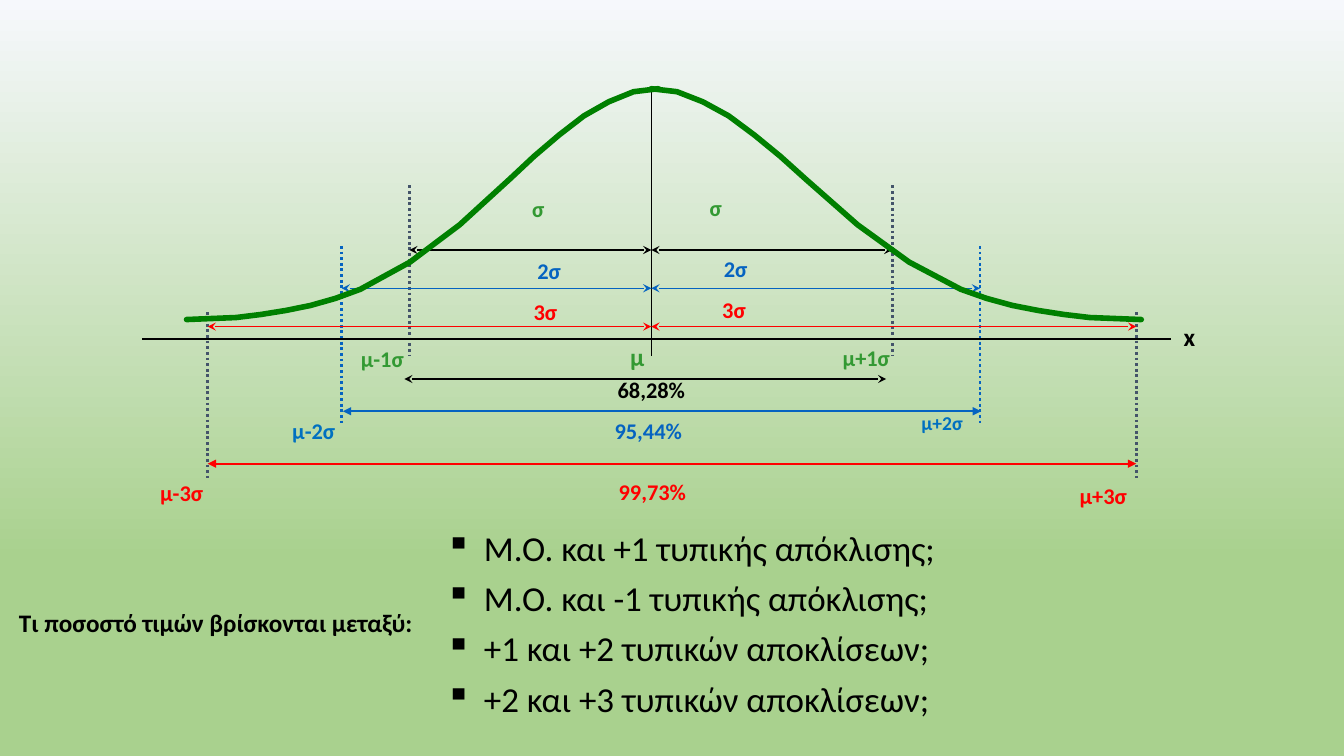
from dataclasses import dataclass

from lxml.etree import SubElement
from pptx import Presentation
from pptx.dml.color import RGBColor
from pptx.enum.dml import MSO_LINE
from pptx.enum.shapes import MSO_CONNECTOR
from pptx.enum.text import PP_ALIGN
from pptx.oxml.ns import qn
from pptx.slide import Slide
from pptx.util import Inches, Pt

FONT = "Calibri"
BLACK, SLATE, BLUE, SKY = "000000", "44546A", "0563C1", "0070C0"
RED, GREEN, CURVE_GREEN = "FF0000", "339933", "008000"
MEAN = 6.46
AXIS_Y = 3.36
CURVE_STEPS = (0, 1, 2, 3, 4, 5, 6, 8, 10, 12, 13, 14, 15, 16, 17, 19)
CURVE_HEIGHTS = (0.88, 0.91, 1.01, 1.15, 1.34, 1.55, 1.78, 2.23,
                 2.6, 2.87, 2.96, 3.03, 3.08, 3.12, 3.15, 3.17)
QUESTIONS = (
    "Μ.Ο. και +1 τυπικής απόκλισης;",
    "Μ.Ο. και -1 τυπικής απόκλισης;",
    "+1 και +2 τυπικών αποκλίσεων;",
    "+2 και +3 τυπικών αποκλίσεων;",
)


@dataclass
class Label:
    text: str
    left: float
    top: float
    width: float
    color: str
    size: int = 16
    height: float = 0.38
    align: PP_ALIGN = PP_ALIGN.LEFT
    wrap: bool = True


@dataclass
class Line:
    start: tuple[float, float]
    end: tuple[float, float]
    color: str
    width: float
    arrow: str = ""
    dotted: bool = False


@dataclass
class Band:
    left: float
    right: float
    guide_top: float
    guide_bottom: float
    guide_color: str
    half_y: float
    span_left: float
    span_right: float
    span_y: float
    span_arrow: str
    color: str


BANDS = (
    Band(4.06, 8.85, 1.84, 3.53, SLATE, 2.48, 4.01, 8.79, 3.76, "stealth", BLACK),
    Band(3.39, 9.72, 2.44, 4.22, BLUE, 2.86, 3.4, 9.73, 4.08, "triangle", BLUE),
    Band(2.06, 11.27, 3.1, 4.74, SLATE, 3.24, 2.06, 11.27, 4.6, "triangle", RED),
)

LABELS = (
    Label("μ", 6.15, 3.34, 0.69, GREEN, 18, 0.41),
    Label("μ+1σ", 8.26, 3.36, 1.44, GREEN),
    Label("μ-1σ", 3.48, 3.37, 1.32, GREEN),
    Label("σ", 6.94, 1.88, 0.62, GREEN),
    Label("σ", 5.18, 1.89, 0.74, GREEN),
    Label("μ+2σ", 9.04, 4.03, 1.44, SKY, 14, 0.34),
    Label("μ-2σ", 2.8, 4.09, 1.36, SKY),
    Label("μ+3σ", 10.61, 4.73, 1.44, RED),
    Label("μ-3σ", 1.49, 4.7, 1.36, RED),
    Label("2σ", 6.8, 2.48, 0.99, BLUE, align=PP_ALIGN.CENTER),
    Label("2σ", 4.95, 2.5, 0.99, BLUE, align=PP_ALIGN.CENTER),
    Label("3σ", 6.81, 2.89, 0.94, RED, align=PP_ALIGN.CENTER),
    Label("3σ", 4.98, 2.91, 0.86, RED, align=PP_ALIGN.CENTER),
    Label("68,28%", 5.49, 3.68, 1.94, BLACK, align=PP_ALIGN.CENTER),
    Label("95,44%", 5.33, 4.09, 2.2, BLUE, align=PP_ALIGN.CENTER),
    Label("99,73%", 5.47, 4.69, 2, RED, align=PP_ALIGN.CENTER),
    Label("x", 11.64, 3.14, 0.59, BLACK, 18, 0.41, wrap=False),
    Label("Τι ποσοστό τιμών βρίσκονται μεταξύ:", 0.09, 5.98, 4.24, BLACK, 18, 0.4),
)


def rgb(color: str) -> RGBColor:
    return RGBColor.from_string(color)


def paint_background(slide: Slide) -> None:
    fill = slide.background.fill
    fill.gradient()
    fill.gradient_angle = 270
    for stop, position, color in zip(fill.gradient_stops, (0, 0.74), ("F6F8FC", "A9D18E")):
        stop.position = position
        stop.color.rgb = rgb(color)


def draw_label(slide: Slide, label: Label) -> None:
    shape = slide.shapes.add_textbox(Inches(label.left), Inches(label.top),
                                     Inches(label.width), Inches(label.height))
    text_frame = shape.text_frame
    text_frame.word_wrap = label.wrap
    text_frame.text = label.text
    paragraph = text_frame.paragraphs[0]
    paragraph.alignment = label.align
    font = paragraph.runs[0].font
    font.name, font.size, font.bold = FONT, Pt(label.size), True
    font.color.rgb = rgb(label.color)


def draw_line(slide: Slide, line: Line) -> None:
    connector = slide.shapes.add_connector(
        MSO_CONNECTOR.STRAIGHT, *(Inches(value) for value in line.start + line.end))
    connector.line.color.rgb = rgb(line.color)
    connector.line.width = Pt(line.width)
    if line.dotted:
        connector.line.dash_style = MSO_LINE.ROUND_DOT
    properties = connector.element.spPr
    if line.arrow:
        outline = properties.find(qn("a:ln"))
        for end in ("a:headEnd", "a:tailEnd"):
            SubElement(outline, qn(end), type=line.arrow)
    SubElement(properties, qn("a:effectLst"))


def draw_band(slide: Slide, band: Band) -> None:
    for edge in (band.left, band.right):
        draw_line(slide, Line((edge, band.guide_top), (edge, band.guide_bottom),
                              band.guide_color, 2, dotted=True))
    for start, end in ((band.left, MEAN), (MEAN, band.right)):
        draw_line(slide, Line((start, band.half_y), (end, band.half_y),
                              band.color, 1, "stealth"))
    draw_line(slide, Line((band.span_left, band.span_y), (band.span_right, band.span_y),
                          band.color, 1.5, band.span_arrow))


def draw_half_curve(slide: Slide, peak: float, end: float) -> None:
    step = (end - peak) / CURVE_STEPS[-1]
    points = [(Inches(peak + step * count), Inches(height))
              for count, height in zip(CURVE_STEPS, CURVE_HEIGHTS)]
    builder = slide.shapes.build_freeform(*points[0])
    builder.add_line_segments(points[1:], close=False)
    shape = builder.convert_to_shape()
    shape.shadow.inherit = False
    shape.fill.background()
    shape.line.color.rgb = rgb(CURVE_GREEN)
    shape.line.width = Pt(4)
    shape.element.spPr.find(qn("a:ln")).set("cap", "rnd")


def draw_questions(slide: Slide) -> None:
    shape = slide.shapes.add_textbox(Inches(4.41), Inches(5.21), Inches(5.13), Inches(1.95))
    text_frame = shape.text_frame
    text_frame.word_wrap = True
    text_frame.margin_left = text_frame.margin_right = text_frame.margin_bottom = 0
    text_frame.margin_top = Inches(0.01)
    text_frame.text = "\n".join(QUESTIONS)
    for index, paragraph in enumerate(text_frame.paragraphs):
        paragraph.space_before = Pt(6 if index else 0)
        font = paragraph.runs[0].font
        font.name, font.size = FONT, Pt(25)
        font.color.rgb = rgb(BLACK)
        properties = paragraph._p.get_or_add_pPr()
        properties.set("marL", str(Inches(0.39)))
        properties.set("indent", str(Inches(-0.38)))
        SubElement(properties, qn("a:buChar"), char="▪")


def main() -> None:
    presentation = Presentation()
    presentation.slide_width = Inches(13.33)
    presentation.slide_height = Inches(7.5)
    slide = presentation.slides.add_slide(presentation.slide_layouts[6])
    paint_background(slide)
    draw_questions(slide)
    draw_line(slide, Line((MEAN, 0.89), (MEAN, 3.53), BLACK, 1))
    for band in BANDS:
        draw_band(slide, band)
    draw_half_curve(slide, MEAN, 11.32)
    draw_half_curve(slide, 6.53, 1.85)
    draw_line(slide, Line((1.41, AXIS_Y), (11.61, AXIS_Y), BLACK, 1.5))
    for label in LABELS:
        draw_label(slide, label)
    presentation.save("out.pptx")


if __name__ == "__main__":
    main()
